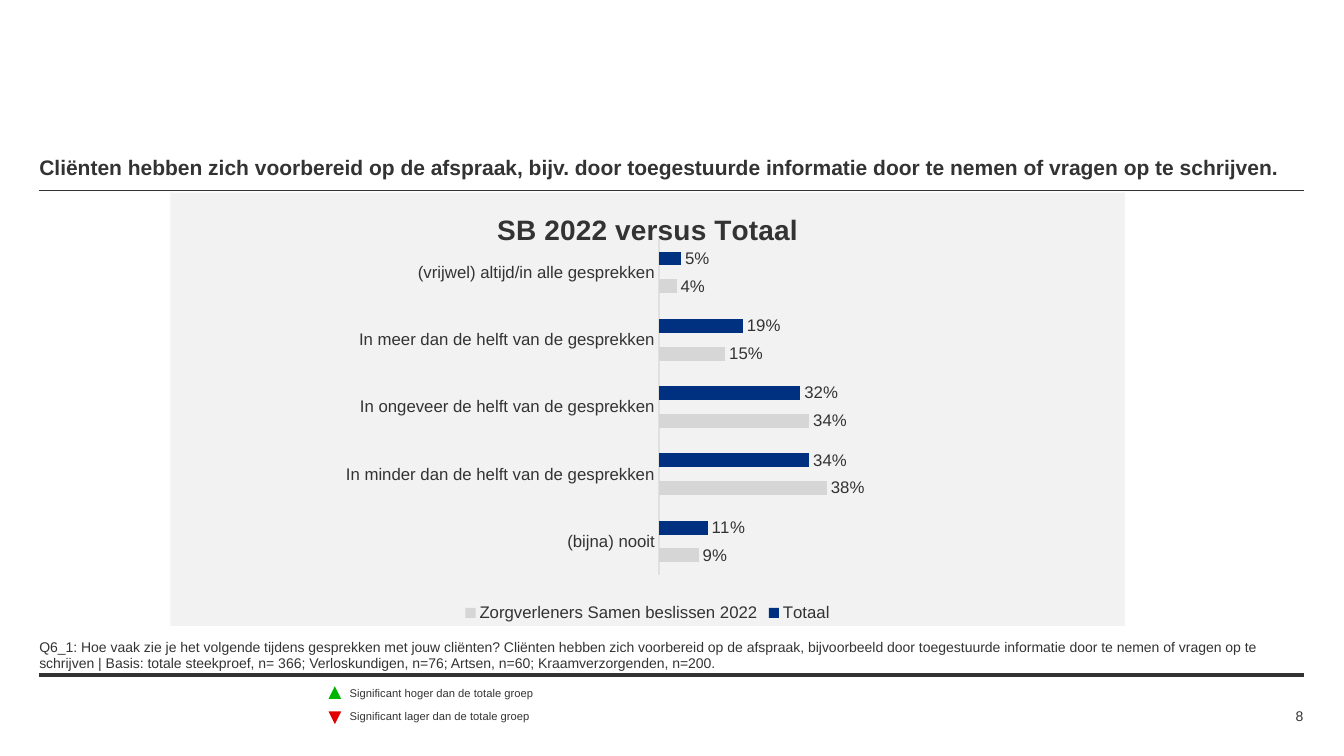
from dataclasses import dataclass

from lxml import etree
from pptx import Presentation
from pptx.chart.data import CategoryChartData
from pptx.dml.color import RGBColor
from pptx.enum.chart import XL_CHART_TYPE as ChartType
from pptx.enum.chart import XL_LABEL_POSITION as LabelPosition
from pptx.enum.chart import XL_LEGEND_POSITION as LegendPosition
from pptx.enum.chart import XL_TICK_MARK as TickMark
from pptx.enum.shapes import MSO_CONNECTOR as Connector
from pptx.enum.shapes import MSO_SHAPE as Shape
from pptx.enum.text import MSO_ANCHOR as Anchor
from pptx.enum.text import PP_ALIGN as Align
from pptx.oxml import parse_xml
from pptx.oxml.ns import nsdecls, qn
from pptx.util import Pt


@dataclass(frozen=True)
class Theme:
    font: str = "Arial"
    ink: str = "333333"
    panel: str = "F2F2F2"
    axis: str = "E0E0E0"
    total: str = "003080"
    spacer: str = "00E5BA"
    providers: str = "D6D6D6"
    higher: str = "00B600"
    lower: str = "E10000"
    chart_title: int = 20
    heading: int = 15
    label: int = 12
    note: int = 10
    key: int = 8


@dataclass(frozen=True)
class TextItem:
    text: str
    left: float
    top: float
    width: float
    height: float
    size: int
    bold: bool = False
    align: Align = Align.LEFT
    anchor: Anchor = Anchor.TOP


@dataclass(frozen=True)
class Rule:
    top: float
    weight: float


@dataclass(frozen=True)
class KeyItem:
    text: str
    top: float
    marker_top: float
    color: str
    rotation: int


@dataclass(frozen=True)
class Series:
    name: str
    values: tuple
    color: str


THEME = Theme()
LEFT, WIDTH = 28.1, 903
KEY_LEFT, KEY_WIDTH, KEY_HEIGHT = 249.8, 141, 15.8
MARKER_LEFT, MARKER_SIZE = 234.7, 9

TEXTS = [
    TextItem("Cliënten hebben zich voorbereid op de afspraak, bijv. door toegestuurde "
             "informatie door te nemen of vragen op te schrijven.",
             LEFT, 110.2, WIDTH, 24.5, THEME.heading, bold=True),
    TextItem("Q6_1: Hoe vaak zie je het volgende tijdens gesprekken met jouw cliënten? "
             "Cliënten hebben zich voorbereid op de afspraak, bijvoorbeeld door toegestuurde "
             "informatie door te nemen of vragen op te schrijven | Basis: totale steekproef, "
             "n= 366; Verloskundigen, n=76; Artsen, n=60; Kraamverzorgenden, n=200.",
             LEFT, 455.8, WIDTH, 24.5, THEME.note),
    TextItem("8", 854.7, 503.3, 76.3, KEY_HEIGHT, THEME.note,
             align=Align.RIGHT, anchor=Anchor.MIDDLE),
]
RULES = [Rule(136.1, 1), Rule(481.9, 3)]
KEYS = [
    KeyItem("Significant hoger dan de totale groep", 487.4, 490.2, THEME.higher, 0),
    KeyItem("Significant lager dan de totale groep", 503.3, 508.2, THEME.lower, 180),
]
CATEGORIES = [
    "(vrijwel) altijd/in alle gesprekken",
    "In meer dan de helft van de gesprekken",
    "In ongeveer de helft van de gesprekken",
    "In minder dan de helft van de gesprekken",
    "(bijna) nooit",
]
# The empty middle series keeps the two bars of a category apart
SERIES = [
    Series("Totaal", (0.05, 0.19, 0.32, 0.34, 0.11), THEME.total),
    Series("Series 2", (None,) * len(CATEGORIES), THEME.spacer),
    Series("Zorgverleners Samen beslissen 2022", (0.04, 0.15, 0.34, 0.38, 0.09),
           THEME.providers),
]
SPACER_INDEX = 1


def style_font(font, size: int, bold: bool = False) -> None:
    font.name = THEME.font
    font.size = Pt(size)
    font.bold = bold
    font.color.rgb = RGBColor.from_string(THEME.ink)


def add_text(slide, item: TextItem) -> None:
    box = slide.shapes.add_textbox(Pt(item.left), Pt(item.top), Pt(item.width), Pt(item.height))
    frame = box.text_frame
    frame.word_wrap = True
    frame.margin_left = frame.margin_right = frame.margin_top = frame.margin_bottom = 0
    frame.vertical_anchor = item.anchor
    paragraph = frame.paragraphs[0]
    paragraph.alignment = item.align
    run = paragraph.add_run()
    run.text = item.text
    style_font(run.font, item.size, item.bold)


def add_rule(slide, rule: Rule) -> None:
    line = slide.shapes.add_connector(
        Connector.STRAIGHT, Pt(LEFT), Pt(rule.top), Pt(LEFT + WIDTH), Pt(rule.top))
    line.line.color.rgb = RGBColor.from_string(THEME.ink)
    line.line.width = Pt(rule.weight)
    etree.SubElement(line._element.spPr, qn("a:effectLst"))


def add_key(slide, key: KeyItem) -> None:
    add_text(slide, TextItem(key.text, KEY_LEFT, key.top, KEY_WIDTH, KEY_HEIGHT,
                             THEME.key, anchor=Anchor.MIDDLE))
    marker = slide.shapes.add_shape(Shape.ISOSCELES_TRIANGLE, Pt(MARKER_LEFT),
                                    Pt(key.marker_top), Pt(MARKER_SIZE), Pt(MARKER_SIZE))
    marker.rotation = key.rotation
    marker.shadow.inherit = False
    marker.fill.solid()
    marker.fill.fore_color.rgb = RGBColor.from_string(key.color)
    marker.line.fill.background()


def add_bar_chart(slide) -> None:
    data = CategoryChartData(number_format="0%")
    data.categories = CATEGORIES
    for series in SERIES:
        data.add_series(series.name, series.values)
    chart = slide.shapes.add_chart(ChartType.BAR_CLUSTERED, Pt(121.7), Pt(137.5),
                                   Pt(681.8), Pt(309.6), data).chart
    style_font(chart.font, THEME.note)

    # Title and legend
    chart.has_title = True
    run = chart.chart_title.text_frame.paragraphs[0].add_run()
    run.text = "SB 2022 versus Totaal"
    style_font(run.font, THEME.chart_title, bold=True)
    chart.has_legend = True
    legend = chart.legend
    legend.position = LegendPosition.BOTTOM
    legend.include_in_layout = False
    style_font(legend.font, THEME.label)
    legend._element.find(qn("c:legendPos")).addnext(parse_xml(
        f'<c:legendEntry {nsdecls("c")}><c:idx val="{SPACER_INDEX}"/>'
        '<c:delete val="1"/></c:legendEntry>'))

    # Axes
    categories, values = chart.category_axis, chart.value_axis
    categories.reverse_order = True
    categories.major_tick_mark = categories.minor_tick_mark = TickMark.NONE
    categories.format.line.color.rgb = RGBColor.from_string(THEME.axis)
    categories.format.line.width = Pt(0.75)
    style_font(categories.tick_labels.font, THEME.label)
    values.minimum_scale, values.maximum_scale = 0, 1
    values.has_major_gridlines = False
    values.visible = False

    # Bars and their values
    plot = chart.plots[0]
    plot.gap_width = 182
    plot.vary_by_categories = False
    for bars, series in zip(plot.series, SERIES):
        bars.format.fill.solid()
        bars.format.fill.fore_color.rgb = RGBColor.from_string(series.color)
        labels = bars.data_labels
        labels.show_value = True
        labels.position = LabelPosition.OUTSIDE_END
        labels.number_format = "0%"
        labels.number_format_is_linked = False
        style_font(labels.font, THEME.label)

    # Fixed plot area and grey panel
    plot_area = chart._chartSpace.chart.plotArea
    for old_layout in plot_area.findall(qn("c:layout")):
        plot_area.remove(old_layout)
    sizes = "".join(f'<c:{name} val="{value}"/>' for name, value in
                    (("x", 0.512), ("y", 0.107), ("w", 0.463), ("h", 0.776)))
    plot_area.insert(0, parse_xml(
        f'<c:layout {nsdecls("c")}><c:manualLayout><c:layoutTarget val="inner"/>'
        f'<c:xMode val="edge"/><c:yMode val="edge"/>{sizes}</c:manualLayout></c:layout>'))
    chart._chartSpace.chart.addnext(parse_xml(
        f'<c:spPr {nsdecls("c", "a")}><a:solidFill><a:srgbClr val="{THEME.panel}"/>'
        '</a:solidFill><a:ln><a:noFill/></a:ln></c:spPr>'))


def main() -> None:
    presentation = Presentation()
    presentation.slide_width, presentation.slide_height = Pt(960), Pt(540)
    slide = presentation.slides.add_slide(presentation.slide_layouts[6])
    add_bar_chart(slide)
    for rule in RULES:
        add_rule(slide, rule)
    for item in TEXTS:
        add_text(slide, item)
    for key in KEYS:
        add_key(slide, key)
    presentation.save("out.pptx")


if __name__ == "__main__":
    main()
